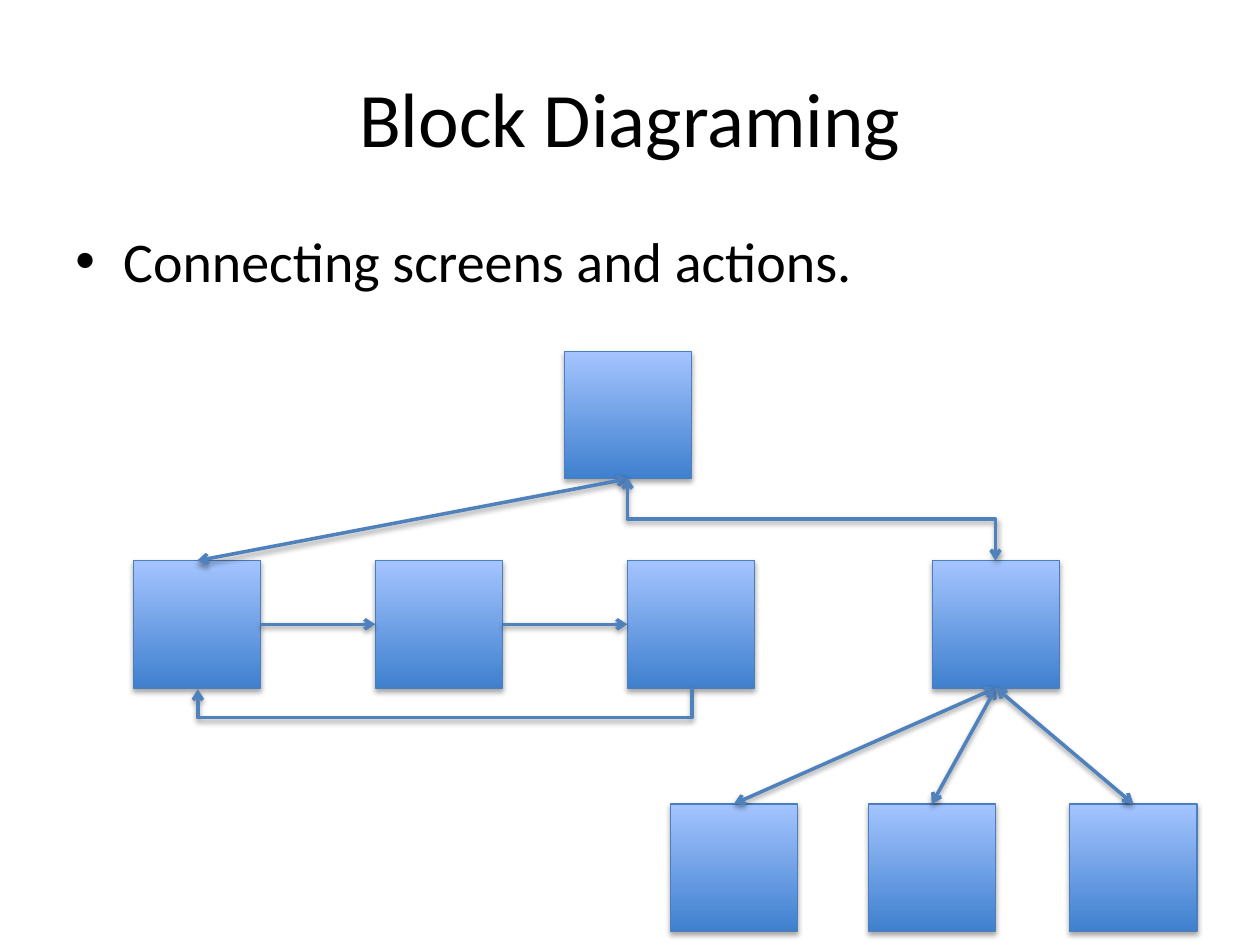
import pptx
import pptx.dml.color
import pptx.enum.shapes
import pptx.enum.text
import pptx.oxml
import pptx.oxml.ns
import pptx.util
from lxml import etree

Inches = pptx.util.Inches
Pt = pptx.util.Pt
RGBColor = pptx.dml.color.RGBColor
CONNECTOR = pptx.enum.shapes.MSO_CONNECTOR
qn = pptx.oxml.ns.qn

BLACK = RGBColor(0x00, 0x00, 0x00)
BLOCK_BOTTOM = RGBColor(0x3F, 0x80, 0xCE)
BLOCK_TOP = RGBColor(0xA4, 0xC4, 0xFF)
BLOCK_LINE = RGBColor(0x4B, 0x7E, 0xBC)
ARROW = RGBColor(0x4F, 0x81, 0xBD)

TOP, LEFT, BOTTOM, RIGHT = range(4)
BLOCK_SIZE = 1.01


class DiagramSlide:
    font = "Calibri"

    def __init__(self, prs):
        self.slide = prs.slides.add_slide(prs.slide_layouts[5])

    def add_run(self, p, text, size):
        r = p.add_run()
        r.text = text
        r.font.name = self.font
        r.font.size = Pt(size)
        r.font.color.rgb = BLACK

    def title(self, text, x, y, w, h):
        sp = self.slide.shapes.title
        sp.left, sp.top, sp.width, sp.height = map(Inches, (x, y, w, h))
        tf = sp.text_frame
        tf.vertical_anchor = pptx.enum.text.MSO_ANCHOR.MIDDLE
        p = tf.paragraphs[0]
        p.alignment = pptx.enum.text.PP_ALIGN.CENTER
        self.add_run(p, text, 44)

    def bullet(self, text, x, y, w, h):
        sp = self.slide.shapes.add_textbox(*map(Inches, (x, y, w, h)))
        tf = sp.text_frame
        tf.word_wrap = True
        p = tf.paragraphs[0]
        p.space_before = Pt(6.4)
        pPr = p._p.get_or_add_pPr()
        pPr.set("marL", str(Inches(0.38)))
        pPr.set("indent", str(Inches(-0.38)))
        etree.SubElement(pPr, qn("a:buFont"), typeface="Arial")
        etree.SubElement(pPr, qn("a:buChar"), char="•")
        self.add_run(p, text, 32)

    def shadow(self, sp, distance, opacity):
        """Add a soft shadow straight below; call after the line is set."""
        effects = etree.SubElement(sp._element.spPr, qn("a:effectLst"))
        outer = etree.SubElement(
            effects, qn("a:outerShdw"), blurRad=str(Pt(3.1)),
            dist=str(Pt(distance)), dir="5400000", rotWithShape="0")
        color = etree.SubElement(outer, qn("a:srgbClr"), val=str(BLACK))
        etree.SubElement(color, qn("a:alpha"), val=str(opacity * 1000))

    def block(self, x, y):
        sp = self.slide.shapes.add_shape(
            pptx.enum.shapes.MSO_SHAPE.RECTANGLE,
            *map(Inches, (x, y, BLOCK_SIZE, BLOCK_SIZE)))
        sp.fill.gradient()
        sp.fill.gradient_angle = 90
        for stop, color in zip(sp.fill.gradient_stops, (BLOCK_BOTTOM, BLOCK_TOP)):
            stop.color.rgb = color
        sp.line.color.rgb = BLOCK_LINE
        sp.line.width = Pt(0.75)
        self.shadow(sp, 1.8, 35)
        return sp

    def style_arrow(self, cxn, both):
        cxn.line.color.rgb = ARROW
        cxn.line.width = Pt(2)
        ln = cxn.line._get_or_add_ln()
        for end in ("a:headEnd", "a:tailEnd") if both else ("a:tailEnd",):
            etree.SubElement(ln, qn(end), type="arrow")
        self.shadow(cxn, 1.6, 38)

    def arrow(self, start, start_side, end, end_side, both=False):
        cxn = self.slide.shapes.add_connector(CONNECTOR.STRAIGHT, 0, 0, 0, 0)
        cxn.begin_connect(start, start_side)
        cxn.end_connect(end, end_side)
        self.style_arrow(cxn, both)

    def elbow(self, x1, y1, x2, y2, drop, both=False):
        """Go down by drop, across to x2, then up or down to y2."""
        across, down = abs(x2 - x1), y2 - y1
        x = (x1 + x2 - down) / 2
        y = (y1 + y2 - across) / 2
        cxn = self.slide.shapes.add_connector(
            CONNECTOR.ELBOW, *map(Inches, (x, y, x + down, y + across)))
        spPr = cxn._element.spPr
        xfrm = spPr.find(qn("a:xfrm"))
        if x2 < x1:
            xfrm.set("rot", "5400000")
        else:
            xfrm.set("rot", "16200000")
            xfrm.set("flipH", "1")
        guides = spPr.find(qn("a:prstGeom")).get_or_add_avLst()
        etree.SubElement(guides, qn("a:gd"), name="adj1",
                         fmla=f"val {round(drop / down * 100000)}")
        self.style_arrow(cxn, both)


def main():
    prs = pptx.Presentation()
    prs.slide_width, prs.slide_height = Inches(10), Inches(7.5)
    s = DiagramSlide(prs)
    s.title("Block Diagraming", 0.5, 0.3, 9, 1.25)
    s.bullet("Connecting screens and actions.", 0.5, 1.75, 9, 0.8)

    root = s.block(4.48, 2.79)
    steps = [s.block(x, 4.45) for x in (1.06, 2.98, 4.98)]
    parent = s.block(7.4, 4.45)
    children = [s.block(x, 6.38) for x in (5.32, 6.89, 8.49)]

    for step, following in zip(steps, steps[1:]):
        s.arrow(step, RIGHT, following, LEFT)
    s.elbow(5.49, 5.46, 1.57, 5.47, 0.24)
    s.arrow(root, BOTTOM, steps[0], TOP, both=True)
    for child in children:
        s.arrow(parent, BOTTOM, child, TOP, both=True)
    s.elbow(4.98, 3.79, 7.9, 4.45, 0.33, both=True)

    prs.save("out.pptx")


if __name__ == "__main__":
    main()
